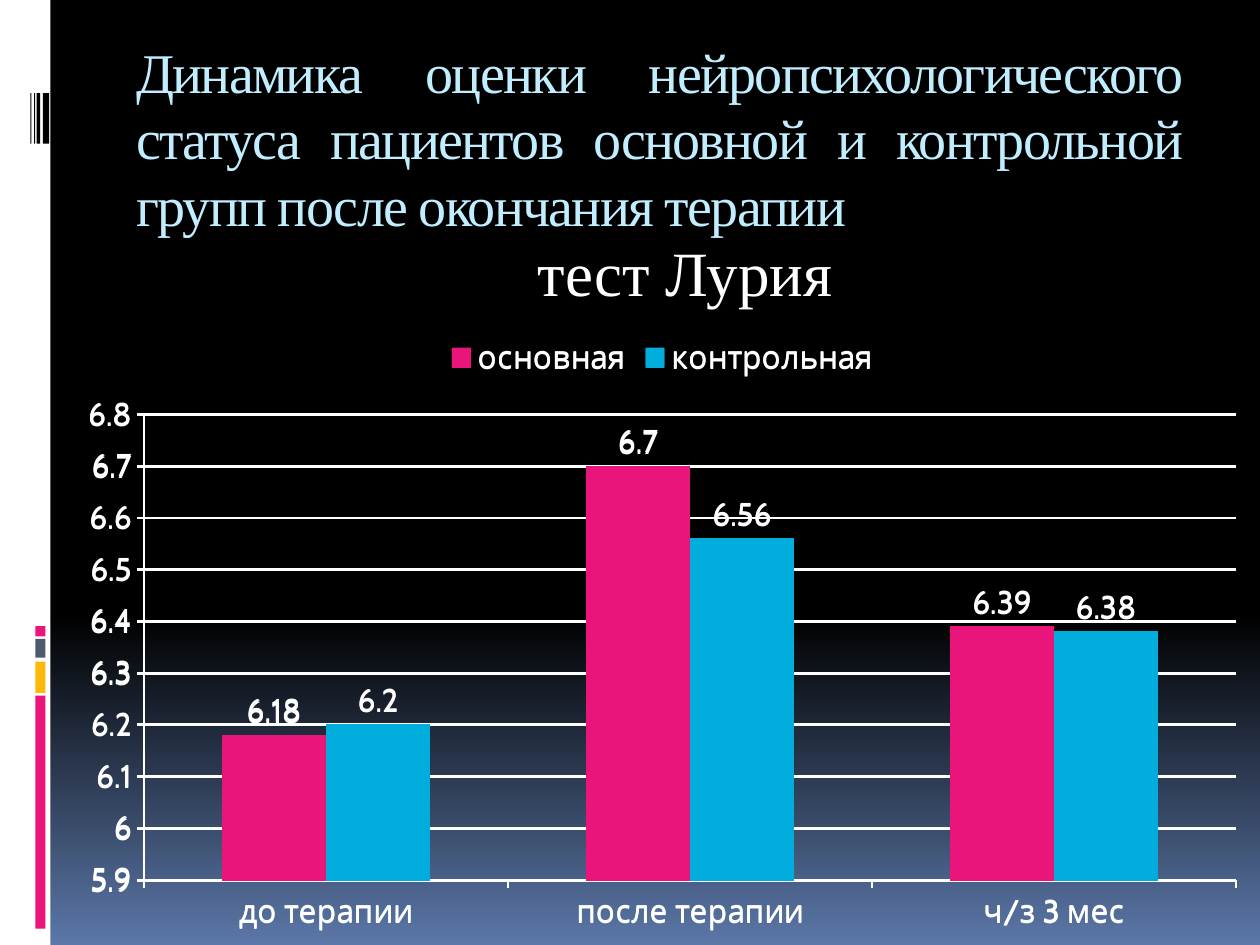
"""Build a slide that compares test scores of two patient groups."""
from dataclasses import dataclass

from pptx import Presentation
from pptx.chart.data import CategoryChartData
from pptx.dml.color import RGBColor
from pptx.enum.chart import XL_CHART_TYPE, XL_LABEL_POSITION, XL_LEGEND_POSITION
from pptx.enum.shapes import MSO_SHAPE
from pptx.enum.text import MSO_ANCHOR, PP_ALIGN
from pptx.util import Inches, Pt

COLS, ROWS = 100, 75
WIDE, HIGH = Inches(10), Inches(7.5)
HUES = {
    "white": "FFFFFF", "black": "000000", "pink": "EA157A", "gold": "FEB80A",
    "slate": "4E5B6F", "dusk": "5B77A8", "ice": "C1EEFF", "blue": "00ADDC",
}
CATS = ("до терапии", "после терапии", "ч/з 3 мес")


@dataclass(frozen=True)
class Box:
    x: float
    y: float
    w: float
    h: float

    def span(self) -> tuple:
        across, down = WIDE / COLS, HIGH / ROWS
        return (round(self.x * across), round(self.y * down),
                round(self.w * across), round(self.h * down))


@dataclass(frozen=True)
class Bar:
    box: Box
    hue: str


@dataclass(frozen=True)
class Group:
    name: str
    vals: tuple
    hue: str


BARS = [
    Bar(Box(0, 0, 4, ROWS), "white"),
    *(Bar(Box(2.8, y, 0.8, h), hue) for y, h, hue in (
        (55.2, 18.5, "pink"), (52.5, 2.5, "gold"),
        (50.7, 1.5, "slate"), (49.7, 0.8, "pink"))),
    *(Bar(Box(x, 7.4, w, 4), "black") for x, w in (
        (3.4, 0.5), (2.9, 0.3), (2.7, 0.1), (2.4, 0.1))),
]
GROUPS = (
    Group("основная", (6.18, 6.7, 6.39), "pink"),
    Group("контрольная", (6.2, 6.56, 6.38), "blue"),
)


def tint(hue: str) -> RGBColor:
    return RGBColor.from_string(HUES[hue])


def style(font, size: float, hue: str, face: str) -> None:
    font.size, font.name, font.bold = Pt(size), face, False
    font.color.rgb = tint(hue)


def write(shape, text: str, *, size: float, hue: str, align, pitch: float,
          face: str = "Times New Roman", top: float = 0.05,
          inset: float = 0.1, track: int = 0) -> None:
    frame = shape.text_frame
    frame.word_wrap = True
    frame.vertical_anchor = MSO_ANCHOR.TOP
    frame.margin_top, frame.margin_left = Inches(top), Inches(inset)
    para = frame.paragraphs[0]
    para.alignment, para.line_spacing = align, Pt(pitch)
    run = para.add_run()
    run.text = text
    style(run.font, size, hue, face)
    if track:
        run.font._element.set("spc", str(track))


def place(shape, box: Box) -> None:
    shape.left, shape.top, shape.width, shape.height = box.span()


def draw(slide, bar: Bar) -> None:
    shape = slide.shapes.add_shape(MSO_SHAPE.RECTANGLE, *bar.box.span())
    shape.shadow.inherit = False
    shape.fill.solid()
    shape.fill.fore_color.rgb = tint(bar.hue)
    shape.line.fill.background()


def rule(line) -> None:
    line.color.rgb, line.width = tint("white"), Pt(0.94)


def plot(slide, box: Box) -> None:
    data = CategoryChartData()
    data.categories = CATS
    for group in GROUPS:
        data.add_series(group.name, group.vals)
    chart = slide.shapes.add_chart(
        XL_CHART_TYPE.COLUMN_CLUSTERED, *box.span(), data).chart
    chart.has_title = False
    chart.has_legend = True
    chart.legend.position = XL_LEGEND_POSITION.TOP
    chart.legend.include_in_layout = False
    scale = chart.value_axis
    scale.minimum_scale, scale.maximum_scale, scale.major_unit = 5.9, 6.8, 0.1
    scale.has_major_gridlines = True
    rule(scale.major_gridlines.format.line)
    for axis in (chart.category_axis, scale):
        rule(axis.format.line)
        style(axis.tick_labels.font, 18, "white", "Cabin")
    for part in (chart, chart.legend):
        style(part.font, 18, "white", "Cabin")
    body = chart.plots[0]
    body.gap_width, body.overlap, body.vary_by_categories = 150, 0, False
    for group, series in zip(GROUPS, body.series):
        series.format.fill.solid()
        series.format.fill.fore_color.rgb = tint(group.hue)
        series.invert_if_negative = False
        labels = series.data_labels
        labels.show_value = True
        labels.position = XL_LABEL_POSITION.OUTSIDE_END
        style(labels.font, 18, "white", "Cabin")


def paint(slide) -> None:
    fill = slide.background.fill
    fill.gradient()
    fill.gradient_angle = 270
    for stop, (spot, hue) in zip(fill.gradient_stops,
                                 ((0.65, "black"), (1, "dusk"))):
        stop.position, stop.color.rgb = spot, tint(hue)


def main() -> None:
    deck = Presentation()
    deck.slide_width, deck.slide_height = WIDE, HIGH
    slide = deck.slides.add_slide(deck.slide_layouts[5])
    paint(slide)
    for bar in BARS:
        draw(slide, bar)
    title = slide.shapes.title
    place(title, Box(9.8, 2.1, 85, 15.7))
    write(title, "Динамика оценки нейропсихологического статуса пациентов "
          "основной и контрольной групп после окончания терапии",
          size=32, hue="ice", align=PP_ALIGN.JUSTIFY, pitch=38,
          top=0.09, track=-100)
    test = slide.shapes.add_textbox(*Box(10, 17.8, 85, 51.7).span())
    write(test, "тест Лурия ", size=36, hue="white", align=PP_ALIGN.CENTER,
          pitch=45, inset=0.6)
    for top in (25.7, 25.6):
        plot(slide, Box(5.1, top, 94.9, 49.2))
    deck.save("out.pptx")


if __name__ == "__main__":
    main()
